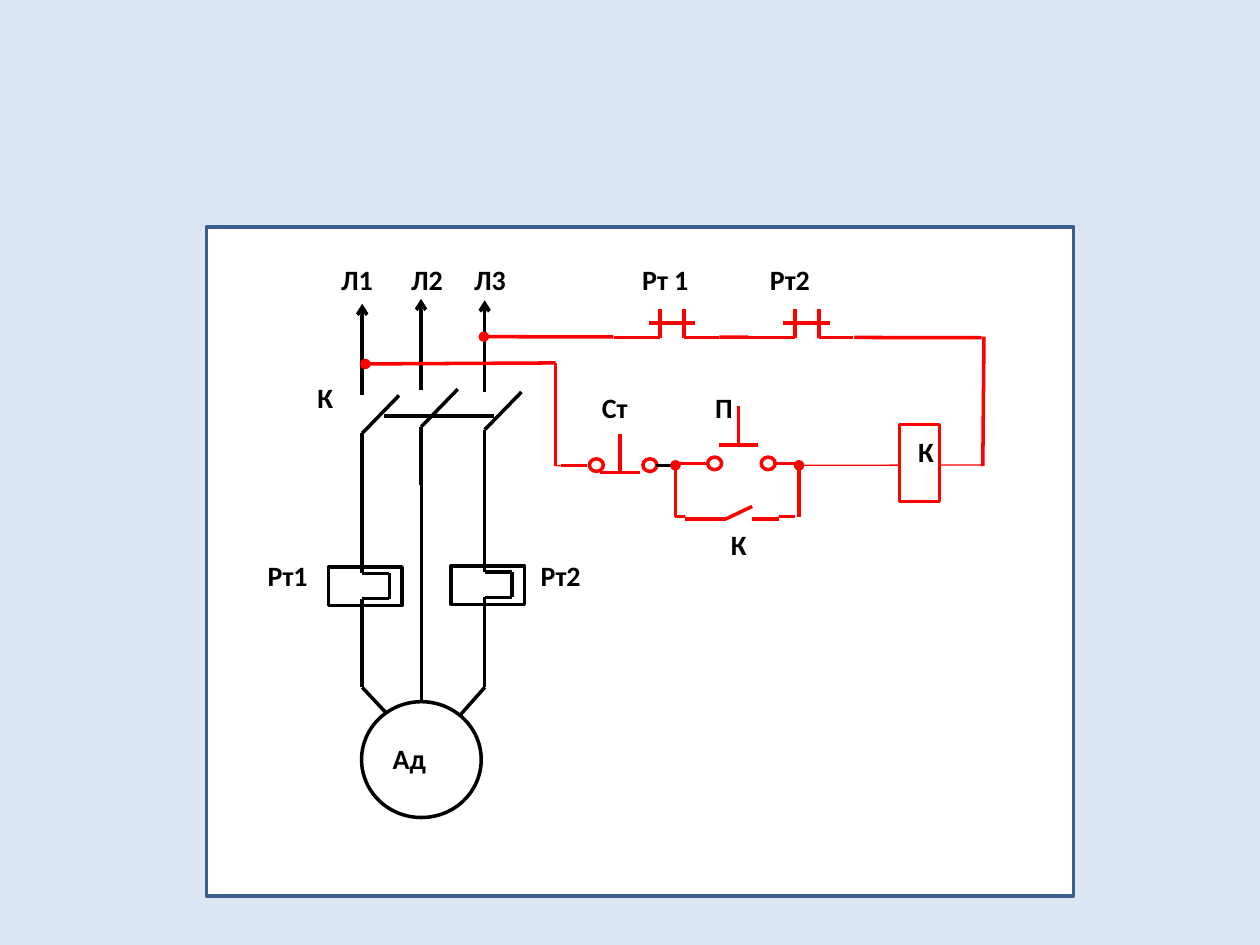
from itertools import pairwise

from lxml.etree import SubElement
from pptx import Presentation
from pptx.dml.color import RGBColor
from pptx.enum.shapes import MSO_CONNECTOR, MSO_SHAPE
from pptx.oxml.ns import qn
from pptx.util import Pt

BLACK, RED, WHITE, BLUE, PALE = "000000", "FF0000", "FFFFFF", "3A5F8C", "DCE6F2"


def tint(code):
    return RGBColor.from_string(code)


class Pen:
    """Holds the current slide and the style of its parts."""

    font = {"name": "Calibri", "size": Pt(16), "bold": True}
    frame = {"margin_left": 0, "margin_top": 0, "margin_right": 0,
             "margin_bottom": 0, "word_wrap": True}
    width = 2

    def __init__(self, slide):
        self.shapes = slide.shapes
        slide.background.fill.solid()
        slide.background.fill.fore_color.rgb = tint(PALE)

    def shape(self, box, line=None, kind=MSO_SHAPE.RECTANGLE):
        item = self.shapes.add_shape(kind, *map(Pt, box))
        item.shadow.inherit = False
        item.fill.solid()
        item.fill.fore_color.rgb = tint(WHITE)
        if line:
            item.line.color.rgb = tint(line)
            item.line.width = Pt(self.width)
        else:
            item.line.fill.background()

    def oval(self, box, line):
        self.shape(box, line, MSO_SHAPE.OVAL)

    def wire(self, *dots, line=RED, width=width, head=None, tail=None):
        """Join the dots with straight lines; the ends may carry marks."""
        links = []
        for start, end in pairwise(dots):
            link = self.shapes.add_connector(
                MSO_CONNECTOR.STRAIGHT, *map(Pt, (*start, *end)))
            link.line.color.rgb = tint(line)
            link.line.width = Pt(width)
            SubElement(link._element.spPr, qn("a:effectLst"))
            links.append(link)
        for link, tag, mark in ((links[0], "a:headEnd", head),
                                (links[-1], "a:tailEnd", tail)):
            if mark:
                SubElement(link.line._get_or_add_ln(), qn(tag), type=mark)

    def label(self, text, x, y):
        box = self.shapes.add_textbox(Pt(x), Pt(y), Pt(44), Pt(24))
        for key, value in self.frame.items():
            setattr(box.text_frame, key, value)
        part = box.text_frame.paragraphs[0]
        part.space_after = Pt(10)
        run = part.add_run()
        run.text = text
        for key, value in self.font.items():
            setattr(run.font, key, value)
        run.font.color.rgb = tint(BLACK)

    def phase(self, x, low, hinge, top, tip):
        """Supply line with its arrow and the open blade of the contactor."""
        self.wire((x, low), (x, hinge), (x + 21, hinge - 21.6), line=BLACK)
        self.wire((x, top), (x, tip), line=BLACK, tail="arrow")

    def relay(self, x, y, start, foot):
        """Thermal relay and its wire from the contactor to the motor."""
        self.shape((x - 19.2, y, 42, 22), BLACK)
        self.wire((x, start), (x, y + 3.6), (x + 15.5, y + 3.6),
                  (x + 15.5, y + 18), (x, y + 18), (x, 392.8), foot, line=BLACK)

    def button(self, x, y, bar, back, out):
        self.shape(back)
        self.wire((x - 11.3, bar), (x + 11.3, bar))
        self.wire((x, bar), (x, bar - 22))
        for left in (x - 17.6, x + 13):
            self.oval((left, y - 3.8, 8, 7.2), RED)
        self.wire((x - 18.8, y), (x - 33.8, y))
        self.wire((x + 20.2, y), (x + 35.5, y), line=out)

    def breaker(self, x):
        """Closed contact of a thermal relay."""
        self.shape((x, 173, 60.5, 24.5))
        self.wire((x, 193), (x + 26.6, 193), (x + 26.6, 176.4))
        self.wire((x + 40.3, 176.4), (x + 40.3, 193), (x + 60, 193))
        self.wire((x + 20, 184.5), (x + 46.6, 184.5))


def main():
    deck = Presentation()
    deck.slide_width, deck.slide_height = Pt(720), Pt(540)
    pen = Pen(deck.slides.add_slide(deck.slide_layouts[6]))
    pen.shape((118, 129.6, 495.4, 382.3), BLUE)

    # Power circuit
    pen.phase(207, 280, 247.6, 226, 173.6)
    pen.phase(240.6, 277.2, 244, 223, 170.8)
    pen.phase(277, 278.6, 245.6, 224, 171.6)
    pen.wire((282.2, 237.6), (219.6, 237.6), line=BLACK)
    pen.relay(207, 324, 280, (221.6, 408.4))
    pen.relay(277, 323.4, 277.2, (262.8, 408.8))
    pen.oval((206.6, 401, 68.4, 66.2), BLACK)
    pen.wire((241, 401), (241, 276.5), line=BLACK)

    # Control circuit
    pen.wire((386, 295.2), (454.3, 295.2))
    pen.wire((208.8, 208), (317.5, 207.4), (317.5, 266.4), head="oval")
    pen.wire((317.5, 266.2), (562, 265.7), width=0.75)
    pen.wire((561.6, 266.4), (562.3, 192.4))
    pen.wire((561, 193), (276.5, 192.4), tail="oval")
    pen.button(354.4, 266, 270, (320.4, 255, 68.4, 22.3), BLACK)
    pen.button(422, 265, 254.2, (386.6, 224.6, 72, 51), RED)
    pen.shape((391.7, 281.5, 53.3, 22.3))
    pen.wire((391.7, 296.6), (414.7, 296.6), (429.8, 289.4))
    pen.wire((429.8, 296.6), (445, 296.6))
    for x in (386, 456.6):
        pen.wire((x, 265.9), (x, 295.2), head="oval")
    pen.shape((514, 242.6, 23, 44), RED)
    for x in (350.6, 427.7):
        pen.breaker(x)

    for text, x, y in (
        ("Л1", 195, 149.8), ("Л2", 235, 149.8), ("Л3", 271, 149.8),
        ("Рт 1", 367, 149.8), ("Рт2", 440, 149.8),
        ("К", 181.4, 217.4), ("Ст", 344, 223.2), ("П", 408.6, 223.2),
        ("К", 417.6, 301.7), ("К", 524.6, 248.4),
        ("Рт1", 153, 319), ("Рт2", 309, 319), ("Ад", 224.4, 424),
    ):
        pen.label(text, x, y)

    deck.save("out.pptx")


if __name__ == "__main__":
    main()
